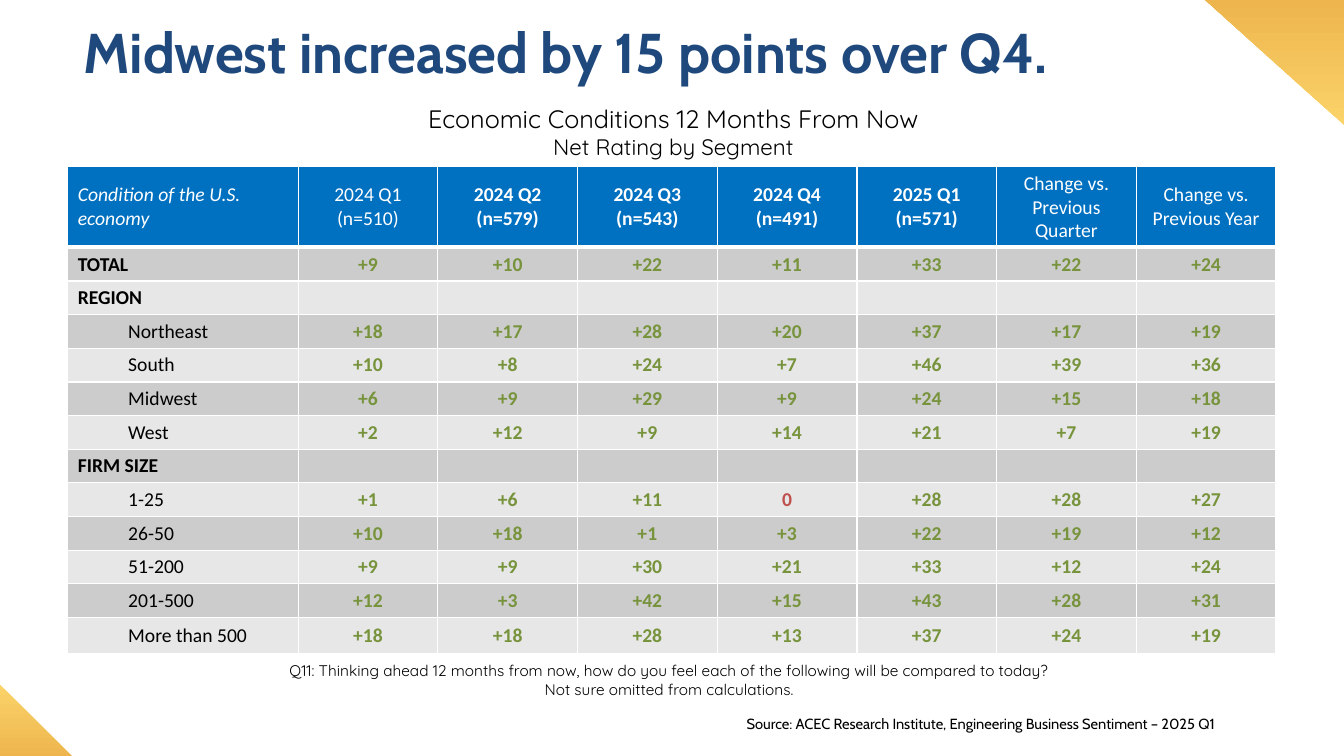
from lxml.etree import SubElement
from pptx import Presentation
from pptx.dml.color import RGBColor
from pptx.enum.shapes import MSO_SHAPE
from pptx.enum.text import MSO_ANCHOR, PP_ALIGN
from pptx.oxml.ns import qn
from pptx.util import Pt

THEME = {
    "navy": "1F497D", "black": "000000", "white": "FFFFFF",
    "header": "0070C0", "bands": ("CCCCCC", "E7E7E7"),
    "positive": "77933C", "neutral": "C0504D",
    "gold": ("FBD369", "EEB54E"),
    "display": "Cabin", "caption": "Quicksand", "body": "Calibri",
    "title_size": 40, "heading_size": 18, "subheading_size": 16,
    "table_size": 14, "note_size": 11, "source_size": 10.5,
}

HEADERS = ["Condition of the U.S. economy", "2024 Q1\n(n=510)", "2024 Q2\n(n=579)",
           "2024 Q3\n(n=543)", "2024 Q4\n(n=491)", "2025 Q1\n(n=571)",
           "Change vs. Previous Quarter", "Change vs. Previous Year"]
BOLD_HEADERS = range(2, 6)
RATINGS = [
    ("TOTAL", "+9 +10 +22 +11 +33 +22 +24"),
    ("REGION", ""),
    ("Northeast", "+18 +17 +28 +20 +37 +17 +19"),
    ("South", "+10 +8 +24 +7 +46 +39 +36"),
    ("Midwest", "+6 +9 +29 +9 +24 +15 +18"),
    ("West", "+2 +12 +9 +14 +21 +7 +19"),
    ("FIRM SIZE", ""),
    ("1-25", "+1 +6 +11 0 +28 +28 +27"),
    ("26-50", "+10 +18 +1 +3 +22 +19 +12"),
    ("51-200", "+9 +9 +30 +21 +33 +12 +24"),
    ("201-500", "+12 +3 +42 +15 +43 +28 +31"),
    ("More than 500", "+18 +18 +28 +13 +37 +24 +19"),
]


def write(frame, lines, face, color, align=PP_ALIGN.LEFT, bold=False, italic=False):
    frame.word_wrap = True
    for index, (text, size) in enumerate(lines):
        paragraph = frame.add_paragraph() if index else frame.paragraphs[0]
        paragraph.alignment = align
        run = paragraph.add_run()
        run.text = text
        run.font.name = face
        run.font.size = Pt(size)
        run.font.bold = bold
        run.font.italic = italic
        run.font.color.rgb = RGBColor.from_string(color)


def paint(cell, fill, bottom_width=1):
    cell.vertical_anchor = MSO_ANCHOR.MIDDLE
    properties = cell._tc.get_or_add_tcPr()
    for side, width in (("lnL", 1), ("lnR", 1), ("lnT", 1), ("lnB", bottom_width)):
        border = SubElement(properties, qn(f"a:{side}"), w=str(Pt(width)))
        SubElement(SubElement(border, qn("a:solidFill")), qn("a:srgbClr"), val=THEME["white"])
    cell.fill.solid()
    cell.fill.fore_color.rgb = RGBColor.from_string(fill)


deck = Presentation()
deck.slide_width, deck.slide_height = Pt(960), Pt(540)
slide = deck.slides.add_slide(deck.slide_layouts[6])
shapes = slide.shapes

for left, top, width, height, rotation in ((861, 0, 99, 89.3, 180), (0, 489, 52.5, 52.5, 0)):
    outline = shapes.build_freeform(Pt(left), Pt(top))
    outline.add_line_segments([(Pt(left), Pt(top + height)),
                               (Pt(left + width), Pt(top + height))], close=True)
    corner = outline.convert_to_shape()
    corner.rotation = rotation
    corner.shadow.inherit = False
    corner.line.fill.background()
    corner.fill.gradient()
    corner.fill.gradient_angle = 270
    for stop, gold in zip(corner.fill.gradient_stops, THEME["gold"]):
        stop.color.rgb = RGBColor.from_string(gold)

title = shapes.add_textbox(Pt(49), Pt(14.4), Pt(870), Pt(63.4)).text_frame
write(title, [("Midwest increased by 15 points over Q4.", THEME["title_size"])],
      THEME["display"], THEME["navy"], bold=True)
title.paragraphs[0].line_spacing = 0.9
title.paragraphs[0]._p.get_or_add_pPr().set("marL", str(Pt(3.6)))

heading = shapes.add_textbox(Pt(283), Pt(69.8), Pt(396), Pt(48.2)).text_frame
heading.vertical_anchor = MSO_ANCHOR.MIDDLE
write(heading, [("Economic Conditions 12 Months From Now", THEME["heading_size"]),
                ("Net Rating by Segment", THEME["subheading_size"])],
      THEME["caption"], THEME["black"], PP_ALIGN.CENTER)

table = shapes.add_table(len(RATINGS) + 1, len(HEADERS),
                         Pt(48.4), Pt(119), Pt(863), Pt(348)).table
table.horz_banding = False
for index, column in enumerate(table.columns):
    column.width = Pt(99.8 if index else 164.6)
for index, row in enumerate(table.rows):
    row.height = Pt(24.05 if index else 57)
table.rows[len(RATINGS)].height = Pt(26)

for index, header in enumerate(HEADERS):
    cell = table.cell(0, index)
    paint(cell, THEME["header"], bottom_width=3)
    write(cell.text_frame, [(line, THEME["table_size"]) for line in header.split("\n")],
          THEME["body"], THEME["white"], PP_ALIGN.CENTER if index else PP_ALIGN.LEFT,
          bold=index in BOLD_HEADERS, italic=index == 0)

for number, (segment, scores) in enumerate(RATINGS, start=1):
    for cell in table.rows[number].cells:
        paint(cell, THEME["bands"][(number - 1) % 2])
    label = table.cell(number, 0).text_frame
    write(label, [(segment, THEME["table_size"])], THEME["body"], THEME["black"],
          bold=segment.isupper())
    if not segment.isupper():
        label.paragraphs[0].level = 1
        label.paragraphs[0]._p.get_or_add_pPr().set("marL", str(Pt(36)))
    values = scores.split() or [""] * (len(HEADERS) - 1)
    for index, score in enumerate(values, start=1):
        rating = table.cell(number, index).text_frame
        if score:
            write(rating, [(score, THEME["table_size"])], THEME["body"],
                  THEME["neutral" if score == "0" else "positive"], PP_ALIGN.CENTER, bold=True)
        else:
            SubElement(rating.paragraphs[0]._p, qn("a:endParaRPr"),
                       sz=str(THEME["table_size"] * 100))

question = shapes.add_textbox(Pt(154), Pt(468.7), Pt(648), Pt(33.8)).text_frame
write(question, [("Q11: Thinking ahead 12 months from now, how do you feel each of the "
                  "following will be compared to today?", THEME["note_size"]),
                 ("Not sure omitted from calculations.", THEME["note_size"])],
      THEME["caption"], THEME["black"], PP_ALIGN.CENTER)

source = shapes.add_shape(MSO_SHAPE.RECTANGLE, Pt(526.3), Pt(507), Pt(424), Pt(20))
source.shadow.inherit = False
source.fill.solid()
source.fill.fore_color.rgb = RGBColor.from_string(THEME["white"])
source.line.fill.background()
source.text_frame.vertical_anchor = MSO_ANCHOR.TOP
write(source.text_frame, [("Source: ACEC Research Institute, Engineering Business Sentiment – 2025 Q1",
                           THEME["source_size"])], THEME["display"], THEME["black"])

deck.save("out.pptx")
